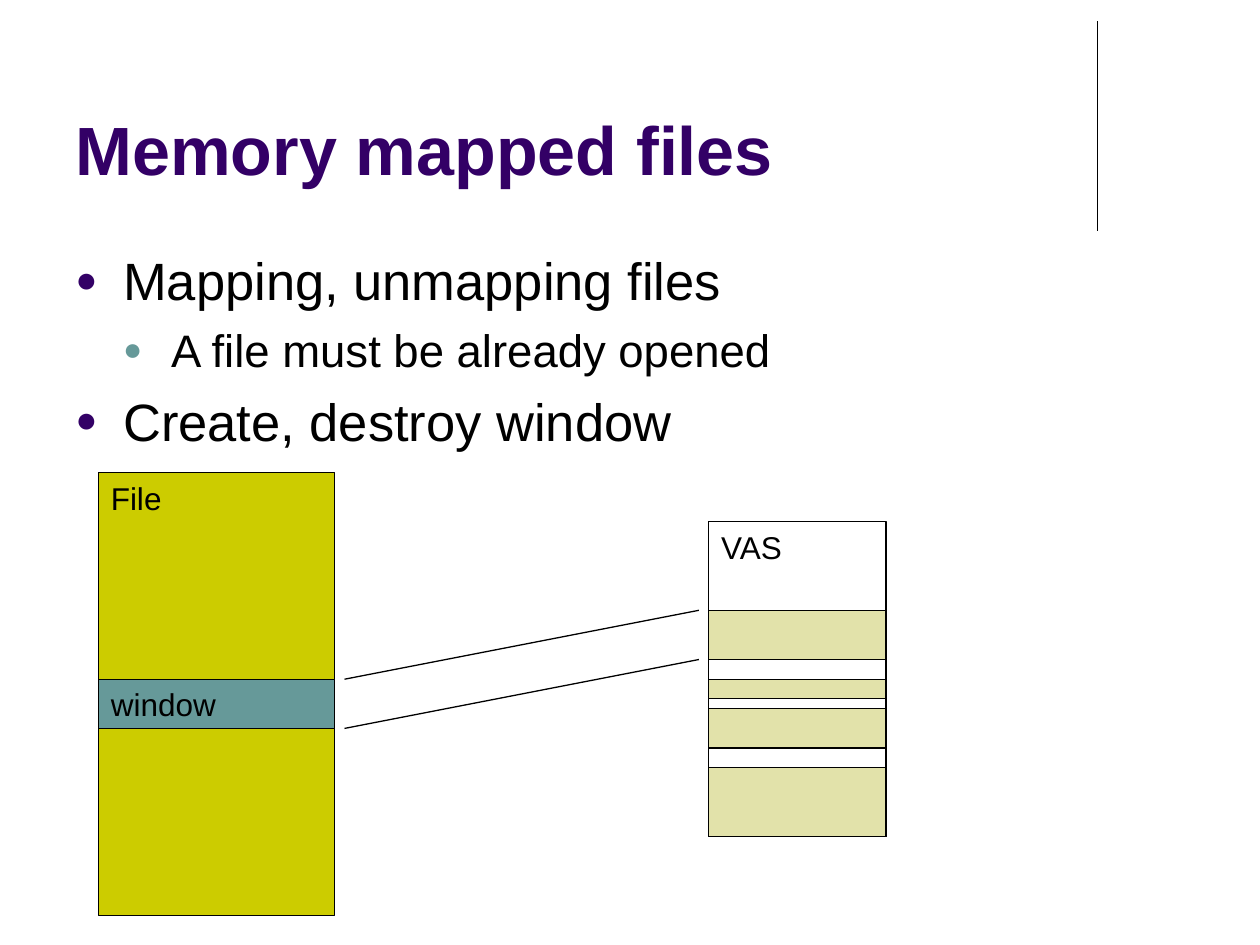
from lxml import etree
from pptx import Presentation, util as u
from pptx.dml.color import RGBColor
from pptx.enum import shapes, text
from pptx.oxml.ns import qn

COLOURS = {
    "ink": "000000",
    "title": "330066",
    "teal": "669999",
    "file": "CCCC00",
    "mapped": "E2E2AA",
}
COLUMNS, ROWS = 128, 96


def colour(name):
    return RGBColor.from_string(COLOURS[name])


class Board:
    """Draws on one slide, in columns and rows of a square grid."""

    font = "Arial"
    line_width = u.Pt(0.75)

    def __init__(self, deck):
        self.slide = deck.slides.add_slide(deck.slide_layouts[6])
        self.cell_width = deck.slide_width / COLUMNS
        self.cell_height = deck.slide_height / ROWS

    def place(self, column, row):
        return round(column * self.cell_width), round(row * self.cell_height)

    def add_span(self, para, words, size, ink="ink", bold=False):
        span = para.add_run()
        span.text = words
        span.font.name = self.font
        span.font.size = u.Pt(size)
        span.font.bold = bold
        span.font.color.rgb = colour(ink)

    def text_box(self, column, row, columns, rows, anchor):
        box = self.slide.shapes.add_textbox(
            *self.place(column, row), *self.place(columns, rows))
        box.text_frame.word_wrap = True
        box.text_frame.vertical_anchor = anchor
        return box.text_frame

    def title(self, words, *area):
        frame = self.text_box(*area, text.MSO_ANCHOR.BOTTOM)
        self.add_span(frame.paragraphs[0], words, 39, "title", bold=True)

    def bullets(self, items, *area):
        """Items are (level, words) pairs."""
        styles = [(30, "title", 7), (26, "teal", 6)]
        frame = self.text_box(*area, text.MSO_ANCHOR.TOP)
        for index, (level, words) in enumerate(items):
            size, mark, space = styles[level]
            para = frame.add_paragraph() if index else frame.paragraphs[0]
            self.add_bullet(para, level, mark)
            if index:
                para.space_before = u.Pt(space)
            self.add_span(para, words, size)

    def add_bullet(self, para, level, mark):
        indent = u.Inches(0.38)
        para.level = level
        props = para._p.get_or_add_pPr()
        props.set("marL", str(indent * (level + 1)))
        props.set("indent", str(-indent))
        tint = etree.SubElement(props, qn("a:buClr"))
        etree.SubElement(tint, qn("a:srgbClr"), val=COLOURS[mark])
        etree.SubElement(props, qn("a:buSzPct"), val="70000")
        etree.SubElement(props, qn("a:buFont"), typeface=self.font)
        etree.SubElement(props, qn("a:buChar"), char="●")

    def block(self, column, row, columns, rows, fill=None, label=None):
        box = self.slide.shapes.add_shape(
            shapes.MSO_SHAPE.RECTANGLE,
            *self.place(column, row), *self.place(columns, rows))
        box.shadow.inherit = False
        if fill:
            box.fill.solid()
            box.fill.fore_color.rgb = colour(fill)
        else:
            box.fill.background()
        box.line.color.rgb = colour("ink")
        box.line.width = self.line_width
        if label:
            box.text_frame.vertical_anchor = text.MSO_ANCHOR.TOP
            para = box.text_frame.paragraphs[0]
            para.alignment = text.PP_ALIGN.LEFT
            self.add_span(para, label, 18)

    def line(self, start, end):
        rule = self.slide.shapes.add_connector(
            shapes.MSO_CONNECTOR.STRAIGHT,
            *self.place(*start), *self.place(*end))
        rule.line.color.rgb = colour("ink")
        rule.line.width = self.line_width
        etree.SubElement(rule._element.spPr, qn("a:effectLst"))


def main():
    deck = Presentation()
    deck.slide_width, deck.slide_height = u.Inches(10), u.Inches(7.5)
    board = Board(deck)

    board.line((111.5, 2.15), (111.5, 23.45))
    board.title("Memory mapped files", 6.4, 1.6, 105.6, 18.2)
    board.bullets([
        (0, "Mapping, unmapping files"),
        (1, "A file must be already opened"),
        (0, "Create, destroy window"),
    ], 6.4, 24.6, 115.2, 22.4)

    file_left, file_width = 10, 24
    space_left, space_width = 72, 18
    window_top, view_top, window_rows = 69, 62, 5

    board.block(file_left, 48, file_width, 45, "file", "File")
    board.block(space_left, 53, space_width, 32, label="VAS")
    for row, rows in [(78, 7), (72, 4), (69, 2), (view_top, window_rows)]:
        board.block(space_left, row, space_width, rows, "mapped")
    board.block(file_left, window_top, file_width, window_rows, "teal", "window")

    for edge in (0, window_rows):
        board.line((file_left + file_width + 1, window_top + edge),
                   (space_left - 1, view_top + edge))

    deck.save("out.pptx")


if __name__ == "__main__":
    main()
